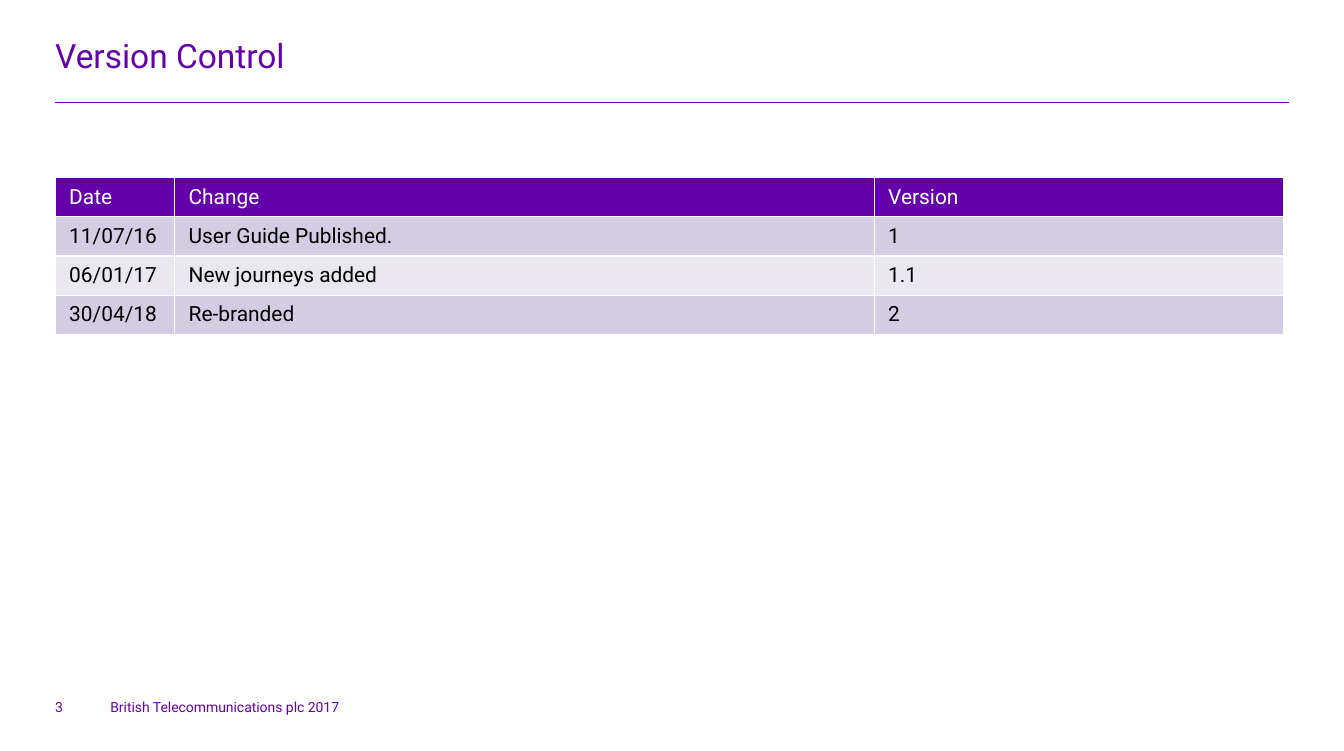
"""Build the Version Control slide with its change history table."""
from dataclasses import dataclass

from lxml.etree import SubElement
from pptx import Presentation
from pptx.dml.color import RGBColor as RGB
from pptx.enum.shapes import MSO_CONNECTOR as Connector
from pptx.enum.text import MSO_ANCHOR as Anchor, MSO_AUTO_SIZE as AutoSize, PP_ALIGN as Align
from pptx.oxml.ns import qn
from pptx.util import Inches, Pt


@dataclass(frozen=True)
class Theme:
    font: str = "Roboto"
    purple: RGB = RGB(0x64, 0x00, 0xAA)
    white: RGB = RGB(0xFF, 0xFF, 0xFF)
    black: RGB = RGB(0x00, 0x00, 0x00)
    bands: tuple = (RGB(0xEA, 0xE7, 0xF1), RGB(0xD3, 0xCC, 0xE2))
    title_size: int = 24
    table_size: int = 15
    footer_size: int = 10


theme = Theme()


def style_paragraph(paragraph, size, color):
    paragraph.alignment = Align.LEFT
    paragraph.font.name = theme.font
    paragraph.font.size = Pt(size)
    paragraph.font.bold = False
    paragraph.font.color.rgb = color


def fill_frame(frame, text, size, anchor):
    frame.text = text
    frame.word_wrap = True
    frame.auto_size = AutoSize.NONE
    frame.vertical_anchor = anchor
    frame.margin_left = frame.margin_top = frame.margin_right = frame.margin_bottom = 0
    style_paragraph(frame.paragraphs[0], size, theme.purple)


deck = Presentation()
deck.slide_width, deck.slide_height = Inches(13.39), Inches(7.48)
slide = deck.slides.add_slide(deck.slide_layouts[5])
margin = Inches(0.55)
content_width = deck.slide_width - 2 * margin

heading = slide.shapes.title
heading.left, heading.top = margin, Inches(0.35)
heading.width, heading.height = content_width, Inches(0.47)
fill_frame(heading.text_frame, "Version Control", theme.title_size, Anchor.TOP)

rule_y = Inches(1.02)
rule = slide.shapes.add_connector(
    Connector.STRAIGHT, margin, rule_y, margin + content_width, rule_y)
rule.line.color.rgb = theme.purple
rule.line.width = Pt(0.25)
SubElement(rule._element.spPr, qn("a:effectLst"))

history = [
    ("Date", "Change", "Version"),
    ("11/07/16", "User Guide Published.", "1"),
    ("06/01/17", "New journeys added", "1.1"),
    ("30/04/18", "Re-branded", "2"),
]
column_widths = [1.19, 6.97, 4.08]
row_height = Inches(0.39)
versions = slide.shapes.add_table(
    len(history), len(column_widths), margin, Inches(1.77),
    Inches(sum(column_widths)), row_height * len(history)).table
for column, width in zip(versions.columns, column_widths):
    column.width = Inches(width)

for row_index, entry in enumerate(history):
    is_header = row_index == 0
    for column_index, value in enumerate(entry):
        cell = versions.cell(row_index, column_index)
        cell.text = value
        cell.margin_left = cell.margin_right = Inches(0.14)
        cell.margin_top = cell.margin_bottom = Inches(0.07)
        cell.fill.solid()
        cell.fill.fore_color.rgb = theme.purple if is_header else theme.bands[row_index % 2]
        style_paragraph(cell.text_frame.paragraphs[0], theme.table_size,
                        theme.white if is_header else theme.black)

footer_bottom = Inches(7.12)
footer_height = Inches(0.3)
for text, left, width in [
    ("3", margin, Inches(0.39)),
    ("British Telecommunications plc 2017", 2 * margin, Inches(2.36)),
]:
    footer = slide.shapes.add_textbox(left, footer_bottom - footer_height, width, footer_height)
    fill_frame(footer.text_frame, text, theme.footer_size, Anchor.BOTTOM)

deck.save("out.pptx")
